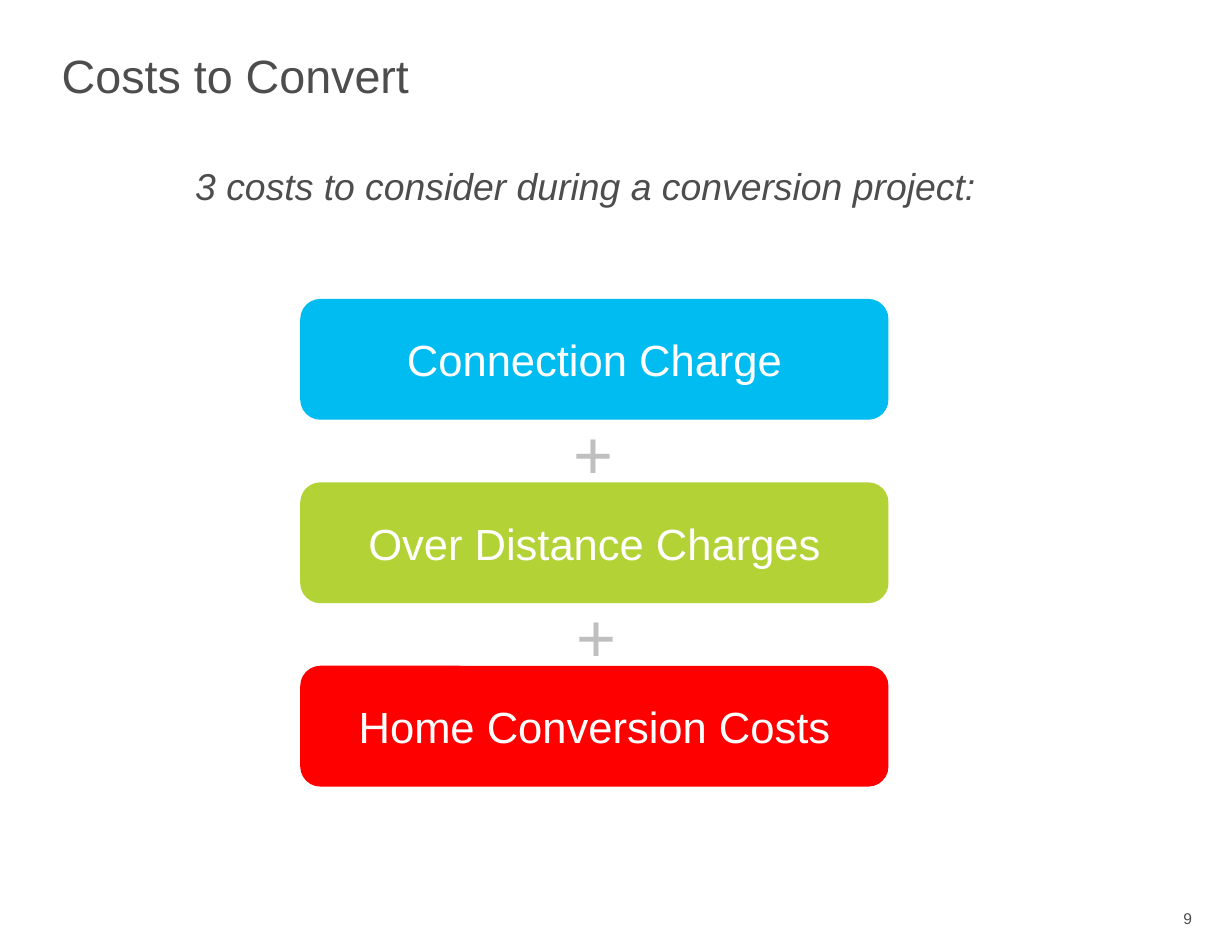
from pptx import Presentation
from pptx.dml.color import RGBColor
from pptx.enum.shapes import MSO_SHAPE
from pptx.enum.text import MSO_ANCHOR, PP_ALIGN
from pptx.util import Cm, Pt

GREY = RGBColor(0x4D, 0x4D, 0x4D)
PALE = RGBColor(0xBF, 0xBF, 0xBF)
WHITE = RGBColor(0xFF, 0xFF, 0xFF)
BLUE = RGBColor(0x00, 0xBC, 0xF1)
GREEN = RGBColor(0xB2, 0xD2, 0x35)
RED = RGBColor(0xFF, 0x00, 0x00)

FONT = "Arial"


def write(shape, text, size, color=GREY, align=PP_ALIGN.LEFT, italic=False,
          anchor=MSO_ANCHOR.TOP, pads=(0.25, 0.13), spacing=1.0):
    """Put one formatted paragraph into a shape; pads are side and top in cm."""
    frame = shape.text_frame
    frame.word_wrap = True
    frame.vertical_anchor = anchor
    frame.margin_left = frame.margin_right = Cm(pads[0])
    frame.margin_top = frame.margin_bottom = Cm(pads[1])
    line = frame.paragraphs[0]
    line.alignment = align
    line.line_spacing = spacing
    run = line.add_run()
    run.text = text
    run.font.name = FONT
    run.font.size = Pt(size)
    run.font.italic = italic
    run.font.color.rgb = color


class Page:
    """Holds the current slide and the style of its parts."""

    def __init__(self, slide):
        self.slide = slide
        self.shapes = slide.shapes

    def title(self, text, left, top, width, height):
        shape = self.shapes.title
        shape.left, shape.top = Cm(left), Cm(top)
        shape.width, shape.height = Cm(width), Cm(height)
        write(shape, text, 30, pads=(0, 0), spacing=1.1)

    def label(self, text, left, top, width, height, size, **style):
        shape = self.shapes.add_textbox(Cm(left), Cm(top), Cm(width), Cm(height))
        write(shape, text, size, **style)

    def card(self, text, left, top, width, height, fill):
        shape = self.shapes.add_shape(MSO_SHAPE.ROUNDED_RECTANGLE,
                                      Cm(left), Cm(top), Cm(width), Cm(height))
        shape.shadow.inherit = False
        shape.fill.solid()
        shape.fill.fore_color.rgb = fill
        shape.line.fill.background()
        write(shape, text, 28, color=WHITE, align=PP_ALIGN.CENTER,
              anchor=MSO_ANCHOR.MIDDLE)


def main():
    deck = Presentation()
    deck.slide_width, deck.slide_height = Cm(27.94), Cm(21.59)
    page = Page(deck.slides.add_slide(deck.slide_layouts[5]))

    # Heading, lead line and page number
    page.title("Costs to Convert", 1.4, 0.94, 23.75, 1.9)
    page.label("3 costs to consider during a conversion project:",
               1.4, 3.61, 23.75, 1.9, 24, align=PP_ALIGN.CENTER,
               italic=True, pads=(0, 0), spacing=1.1)
    page.label("9", 26.06, 20.47, 0.97, 0.91, 10,
               align=PP_ALIGN.RIGHT, pads=(0, 0.15))

    # Cost cards at an even pitch
    costs = [("Connection Charge", BLUE),
             ("Over Distance Charges", GREEN),
             ("Home Conversion Costs", RED)]
    pitch = 4.16
    for row, (name, fill) in enumerate(costs):
        page.card(name, 6.81, 6.78 + row * pitch, 13.34, 2.74, fill)

    # Plus signs between the cards
    for row, left in enumerate((12.75, 12.83)):
        page.label("+", left, 9.19 + row * pitch, 1.45, 2.13, 44, color=PALE)

    deck.save("out.pptx")


if __name__ == "__main__":
    main()
